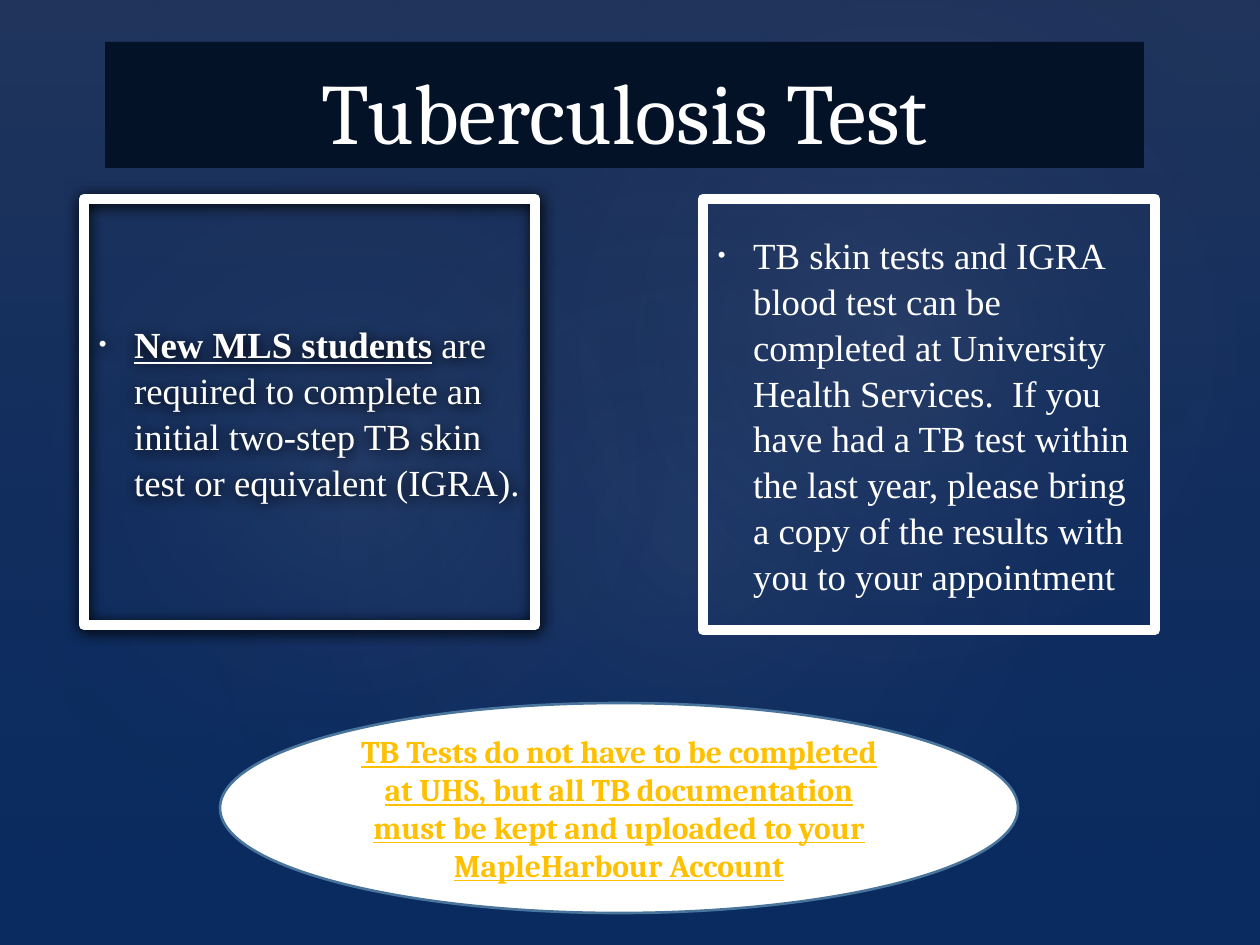
from dataclasses import dataclass
from typing import Optional

import pptx
import pptx.dml.color
import pptx.enum.shapes
import pptx.enum.text
import pptx.oxml
import pptx.oxml.ns
import pptx.util

EMU_PER_PX = 914400 / 126
SHAPES = pptx.enum.shapes.MSO_SHAPE
ANCHORS = pptx.enum.text.MSO_ANCHOR
ALIGNMENTS = pptx.enum.text.PP_ALIGN
COLORS = {
    "background": "072C62",
    "veil_top": "504652",
    "veil_bottom": "242852",
    "glow": "C4BCC6",
    "title_bar": "031227",
    "white": "FFFFFF",
    "outline": "49749B",
    "gold": "FFC000",
    "shadow": "000000",
}


@dataclass
class Box:
    left: int
    top: int
    width: int
    height: int


@dataclass
class Stop:
    position: int
    color: str
    opacity: int


@dataclass
class Glow:
    box: Box
    rotation: float
    opacity: int


@dataclass
class Run:
    text: str
    emphasized: bool = False


@dataclass
class Panel:
    box: Box
    runs: list[Run]
    font: str
    size: int
    text_color: str = "white"
    kind: SHAPES = SHAPES.RECTANGLE
    fill: Optional[str] = None
    line: Optional[str] = None
    line_width: float = 0
    anchor: ANCHORS = ANCHORS.MIDDLE
    bulleted: bool = False
    shadowed: bool = False


GLOWS = [
    Glow(Box(189, 144, 998, 786), 328.7, 7),
    Glow(Box(-38, 161, 764, 617), 294.3, 8),
    Glow(Box(451, 16, 893, 655), 328.7, 8),
]
PANELS = [
    Panel(Box(105, 42, 1039, 126), [Run("Tuberculosis Test")], "Cambria", 49,
          fill="title_bar", anchor=ANCHORS.BOTTOM),
    Panel(Box(84, 199, 451, 426),
          [Run("New MLS students", True),
           Run(" are required to complete an initial two-step TB skin test "
               "or equivalent (IGRA).")],
          "Times New Roman", 21, line="white", line_width=6,
          bulleted=True, shadowed=True),
    Panel(Box(703, 199, 452, 431),
          [Run("TB skin tests and IGRA blood test can be completed at "
               "University Health Services.  If you have had a TB test within "
               "the last year, please bring a copy of the results with you to "
               "your appointment")],
          "Times New Roman", 21, line="white", line_width=6, bulleted=True),
    Panel(Box(220, 703, 798, 210),
          [Run("TB Tests do not have to be completed at UHS, but all TB "
               "documentation must be kept and uploaded to your "
               "MapleHarbour Account", True)],
          "Cambria", 18, text_color="gold", kind=SHAPES.OVAL,
          fill="white", line="outline", line_width=1.5),
]


def px(length: int) -> int:
    return round(length * EMU_PER_PX)


def rgb(name: str) -> pptx.dml.color.RGBColor:
    return pptx.dml.color.RGBColor.from_string(COLORS[name])


def drawing_xml(markup: str):
    """Parse one DrawingML element, declaring its namespace."""
    tag, rest = markup.split(" ", 1)
    return pptx.oxml.parse_xml(f"{tag} {pptx.oxml.ns.nsdecls('a')} {rest}")


def add_shape(slide, kind: SHAPES, box: Box):
    shape = slide.shapes.add_shape(
        kind, px(box.left), px(box.top), px(box.width), px(box.height))
    shape.shadow.inherit = False
    return shape


def add_gradient(slide, kind: SHAPES, box: Box, stops: list[Stop],
                 direction: str, rotation: float = 0) -> None:
    shape = add_shape(slide, kind, box)
    shape.rotation = rotation
    shape.line.fill.background()
    stop_markup = "".join(
        f'<a:gs pos="{stop.position * 1000}">'
        f'<a:srgbClr val="{COLORS[stop.color]}">'
        f'<a:alpha val="{stop.opacity * 1000}"/></a:srgbClr></a:gs>'
        for stop in stops)
    gradient = drawing_xml(
        f'<a:gradFill rotWithShape="1"><a:gsLst>{stop_markup}</a:gsLst>'
        f'{direction}</a:gradFill>')
    geometry = shape._element.spPr.find(pptx.oxml.ns.qn("a:prstGeom"))
    geometry.addnext(gradient)


def add_shadow(shape) -> None:
    effects = shape._element.spPr.find(pptx.oxml.ns.qn("a:effectLst"))
    effects.append(drawing_xml(
        f'<a:outerShdw blurRad="{pptx.util.Pt(8.5)}" dist="{pptx.util.Pt(1)}" '
        f'dir="5400000" rotWithShape="0">'
        f'<a:srgbClr val="{COLORS["shadow"]}"/></a:outerShdw>'))


def add_bullet(paragraph) -> None:
    paragraph.space_before = pptx.util.Pt(4)
    paragraph.line_spacing = 1.04
    properties = paragraph._p.get_or_add_pPr()
    properties.set("marL", str(pptx.util.Inches(0.3)))
    properties.set("indent", str(pptx.util.Inches(-0.28)))
    properties.append(drawing_xml('<a:buSzPct val="60000"/>'))
    properties.append(drawing_xml('<a:buFont typeface="Arial"/>'))
    properties.append(drawing_xml('<a:buChar char="•"/>'))


def add_panel(slide, panel: Panel) -> None:
    shape = add_shape(slide, panel.kind, panel.box)
    if panel.fill:
        shape.fill.solid()
        shape.fill.fore_color.rgb = rgb(panel.fill)
    else:
        shape.fill.background()
    if panel.line:
        shape.line.color.rgb = rgb(panel.line)
        shape.line.width = pptx.util.Pt(panel.line_width)
    else:
        shape.line.fill.background()
    if panel.shadowed:
        add_shadow(shape)

    text_frame = shape.text_frame
    text_frame.word_wrap = True
    text_frame.vertical_anchor = panel.anchor
    paragraph = text_frame.paragraphs[0]
    paragraph.alignment = ALIGNMENTS.LEFT if panel.bulleted else ALIGNMENTS.CENTER
    if panel.bulleted:
        add_bullet(paragraph)
    for part in panel.runs:
        run = paragraph.add_run()
        run.text = part.text
        run.font.name = panel.font
        run.font.size = pptx.util.Pt(panel.size)
        run.font.color.rgb = rgb(panel.text_color)
        run.font.bold = run.font.underline = part.emphasized


def main() -> None:
    presentation = pptx.Presentation()
    presentation.slide_width, presentation.slide_height = px(1260), px(945)
    slide = presentation.slides.add_slide(presentation.slide_layouts[6])

    # Background: flat blue, a veil from the top and three soft glows
    slide.background.fill.solid()
    slide.background.fill.fore_color.rgb = rgb("background")
    add_gradient(slide, SHAPES.RECTANGLE, Box(0, 0, 1260, 945),
                 [Stop(0, "veil_top", 36), Stop(100, "veil_bottom", 10)],
                 '<a:lin ang="5400000" scaled="0"/>')
    for glow in GLOWS:
        add_gradient(slide, SHAPES.OVAL, glow.box,
                     [Stop(0, "glow", glow.opacity), Stop(58, "veil_bottom", 0)],
                     '<a:path path="circle"><a:fillToRect l="50000" t="50000" '
                     'r="50000" b="50000"/></a:path>', glow.rotation)

    # Title bar, two framed notes and the reminder oval
    for panel in PANELS:
        add_panel(slide, panel)

    presentation.save("out.pptx")


if __name__ == "__main__":
    main()
